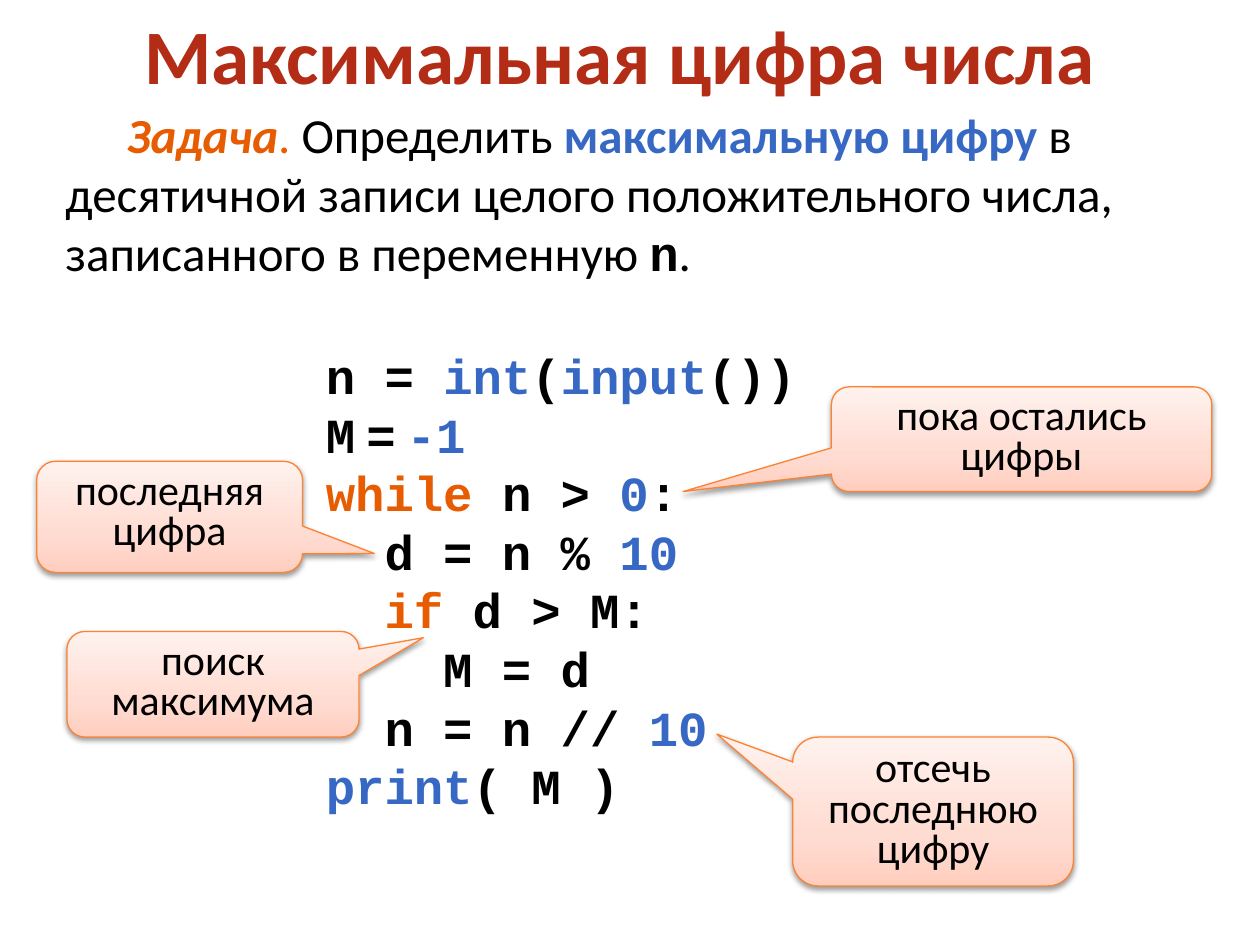
from pptx import Presentation
from pptx.dml.color import RGBColor
from pptx.enum.shapes import MSO_SHAPE
from pptx.enum.text import MSO_ANCHOR, MSO_AUTO_SIZE, PP_ALIGN
from pptx.oxml import parse_xml
from pptx.oxml.ns import nsdecls, qn
from pptx.util import Cm, Pt

CALLOUT = MSO_SHAPE.ROUNDED_RECTANGULAR_CALLOUT
TOP, MIDDLE = MSO_ANCHOR.TOP, MSO_ANCHOR.MIDDLE
GROW = MSO_AUTO_SIZE.SHAPE_TO_FIT_TEXT
CENTER, LEFT = PP_ALIGN.CENTER, PP_ALIGN.LEFT

BLACK = RGBColor(0x00, 0x00, 0x00)
RED = RGBColor(0xB3, 0x2C, 0x16)
BLUE = RGBColor(0x36, 0x68, 0xC4)
ORANGE = RGBColor(0xE7, 0x5C, 0x01)
BORDER = RGBColor(0xFD, 0x82, 0x31)
GRADIENT = (
    (0, RGBColor(0xFF, 0xCE, 0xBF)),
    (35, RGBColor(0xFF, 0xDC, 0xD2)),
    (100, RGBColor(0xFF, 0xF2, 0xEE)),
)

BODY_FONT, CODE_FONT = "Calibri", "Courier New"
TITLE = {"name": BODY_FONT, "size": Pt(44), "bold": True}
BODY = {"name": BODY_FONT, "size": Pt(28)}
BOLD = BODY | {"bold": True}
CODE = {"name": CODE_FONT, "size": Pt(28), "bold": True}
NOTE = {"name": BODY_FONT, "size": Pt(24)}

PROBLEM = [
    ("Задача", ORANGE, BOLD | {"italic": True}),
    (". ", ORANGE, BODY),
    ("Определить ", BLACK, BODY),
    ("максимальную цифру ", BLUE, BOLD),
    ("в десятичной записи целого положительного числа, "
     "записанного в переменную ", BLACK, BODY),
    ("n", BLACK, CODE),
    (".", BLACK, BODY),
]
PROGRAM = [
    [("n = ", BLACK), ("int", BLUE), ("(", BLACK), ("input", BLUE), ("())", BLACK)],
    [("M", BLACK), (" ", BLACK, BOLD), ("=", BLACK), (" ", BLACK, BOLD), ("-1", BLUE)],
    [("while ", ORANGE), ("n > ", BLACK), ("0", BLUE), (":", BLACK)],
    [("  d = n % ", BLACK), ("10", BLUE)],
    [("  ", BLACK), ("if", ORANGE), (" d > M:", BLACK)],
    [("    M = d", BLACK)],
    [("  n = n // ", BLACK), ("10", BLUE)],
    [("print", BLUE), ("( M )", BLACK)],
]
CALLOUTS = [
    ("отсечь последнюю цифру", (15.98, 14.86, 5.66, 3), (-0.77, -0.52)),
    ("последняя цифра", (0.74, 9.3, 5.36, 2.24), (0.77, 0.33)),
    ("пока остались цифры", (16.76, 7.8, 7.67, 2.11), (-0.89, 0.5)),
    ("поиск максимума", (1.35, 12.73, 5.89, 2.13), (0.72, -0.44)),
]


def add_span(para, text, color, style):
    """Append a run of text with the given colour and font values."""
    span = para.add_run()
    span.text = text
    for name, value in style.items():
        setattr(span.font, name, value)
    span.font.color.rgb = color


def add_frame(page, box, anchor):
    """Add a wrapping text box and return its text frame."""
    frame = page.shapes.add_textbox(*map(Cm, box)).text_frame
    frame.word_wrap = True
    frame.vertical_anchor = anchor
    return frame


def add_title(page, box, text):
    """Place the centred heading."""
    para = add_frame(page, box, MIDDLE).paragraphs[0]
    para.alignment = CENTER
    add_span(para, text, RED, TITLE)


def add_problem(page, box, spans):
    """Place the problem statement with an indented first line."""
    frame = add_frame(page, box, TOP)
    frame.auto_size = GROW
    para = frame.paragraphs[0]
    properties = para._p.get_or_add_pPr()
    properties.set("marL", "0")
    properties.set("indent", str(Cm(1.24)))
    for text, color, style in spans:
        add_span(para, text, color, style)


def add_program(page, box, lines):
    """Place the coloured program listing, one paragraph a line."""
    frame = add_frame(page, box, MIDDLE)
    frame.auto_size = GROW
    for number, line in enumerate(lines):
        para = frame.add_paragraph() if number else frame.paragraphs[0]
        para.alignment = LEFT
        para.line_spacing = Pt(33.5)
        for text, color, *style in line:
            add_span(para, text, color, style[0] if style else CODE)


def paint_callout(shape):
    """Give a callout its gradient, border and soft shadow."""
    shape.fill.gradient()
    shape.fill.gradient_angle = 90
    stops = "".join(
        f'<a:gs pos="{place * 1000}"><a:srgbClr val="{color}"/></a:gs>'
        for place, color in GRADIENT
    )
    properties = shape._element.spPr
    gradient = properties.find(qn("a:gradFill"))
    gradient.replace(
        gradient.find(qn("a:gsLst")),
        parse_xml(f'<a:gsLst {nsdecls("a")}>{stops}</a:gsLst>'),
    )
    shape.line.color.rgb = BORDER
    shape.line.width = Pt(0.75)
    shape.shadow.inherit = False
    properties.find(qn("a:effectLst")).append(parse_xml(
        f'<a:outerShdw {nsdecls("a")} blurRad="{Pt(3.1)}" dist="{Pt(1.6)}" '
        'dir="5400000" rotWithShape="0"><a:srgbClr val="000000">'
        '<a:alpha val="38000"/></a:srgbClr></a:outerShdw>'
    ))


def add_callout(page, box, text, tip):
    """Place a callout whose tip is an offset in shares of its size."""
    shape = page.shapes.add_shape(CALLOUT, *map(Cm, box))
    for number, value in enumerate((*tip, 0.17)):
        shape.adjustments[number] = value
    paint_callout(shape)
    frame = shape.text_frame
    frame.word_wrap = True
    frame.vertical_anchor = TOP
    para = frame.paragraphs[0]
    para.alignment = CENTER
    para.line_spacing = 0.8
    add_span(para, text, BLACK, NOTE)


def main():
    """Build the deck and save it."""
    deck = Presentation()
    deck.slide_width, deck.slide_height = Cm(25.4), Cm(19.05)
    page = deck.slides.add_slide(deck.slide_layouts[6])
    add_title(page, (0, 0, 25, 2.16), "Максимальная цифра числа")
    add_program(page, (6.32, 6.78, 12.78, 9.83), PROGRAM)
    for text, box, tip in CALLOUTS:
        add_callout(page, box, text, tip)
    add_problem(page, (1.07, 1.98, 23.16, 3.84), PROBLEM)
    deck.save("out.pptx")


if __name__ == "__main__":
    main()
